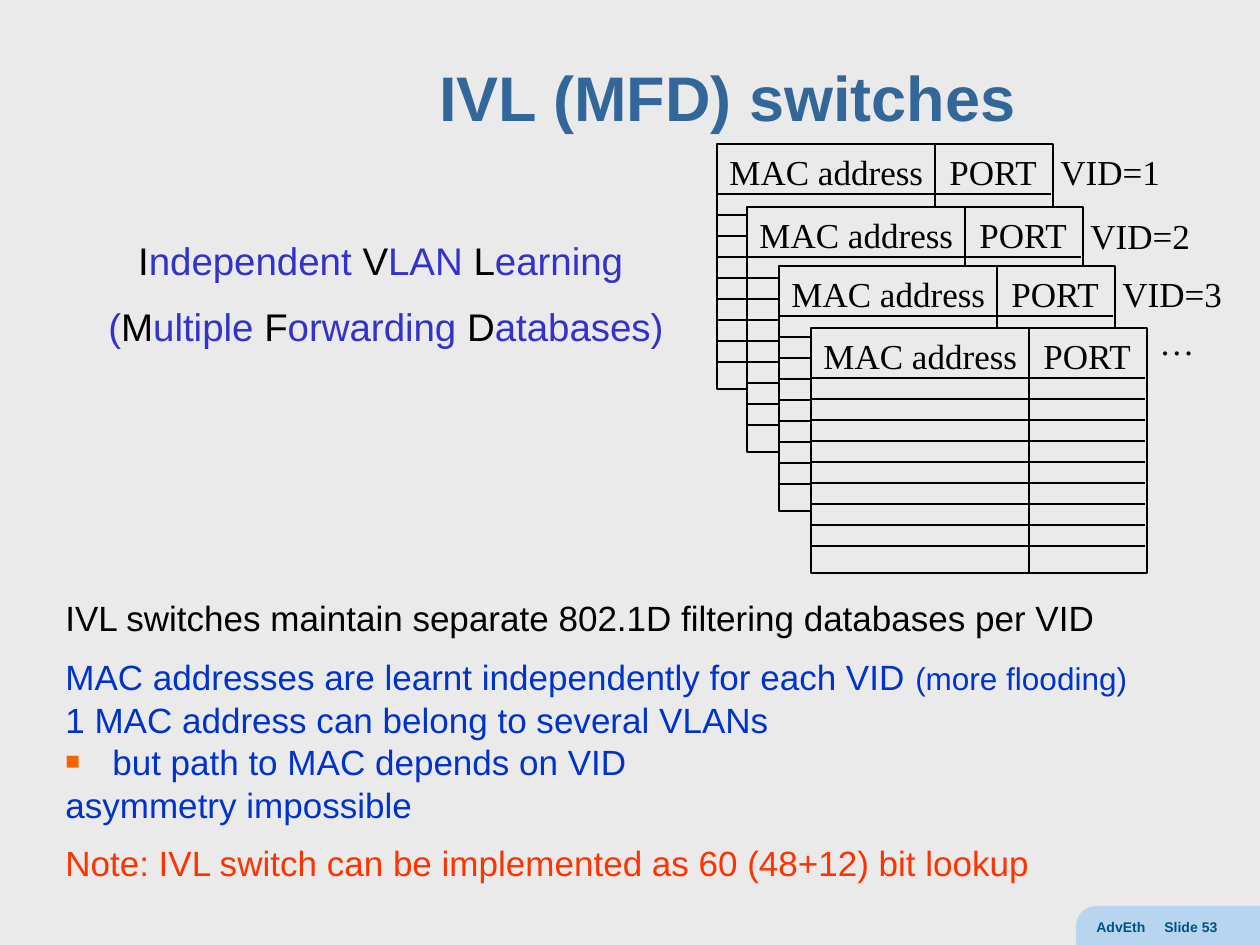
from lxml import etree
from pptx import Presentation, util as u
from pptx.dml.color import RGBColor
from pptx.enum import shapes, text
from pptx.oxml.ns import qn

COLORS = {
    "paper": "EAEAEA", "ink": "000000", "title": "336699", "blue": "0033CC",
    "violet": "3333CC", "red": "FF3300", "bullet": "F46300",
    "tab": "B7D5EF", "footer": "005081",
}
SANS, SERIF = "Arial", "Times New Roman"


def px(n):
    return u.Emu(round(n * 914400 / 126))


def rgb(name):
    return RGBColor.from_string(COLORS[name])


def set_font(font, size, face, color, bold=False):
    font.size, font.name, font.bold = u.Pt(size), face, bold
    font.color.rgb = rgb(color)


def add_text_frame(slide, box):
    frame = slide.shapes.add_textbox(*map(px, box)).text_frame
    frame.word_wrap = True
    return frame


def add_label(slide, box, words, size, face, color, bold=False):
    frame = add_text_frame(slide, box)
    paragraph = frame.paragraphs[0]
    paragraph.text = words
    set_font(paragraph.font, size, face, color, bold)
    return frame


def add_tab_stop(paragraph, position):
    stops = etree.SubElement(paragraph._p.get_or_add_pPr(), qn("a:tabLst"))
    etree.SubElement(stops, qn("a:tab"), pos=str(px(position)), algn="l")


def add_square_bullet(paragraph, indent):
    props = paragraph._p.get_or_add_pPr()
    props.set("marL", str(px(indent)))
    props.set("indent", str(-px(indent)))
    color = etree.SubElement(props, qn("a:buClr"))
    etree.SubElement(color, qn("a:srgbClr"), val=COLORS["bullet"])
    etree.SubElement(props, qn("a:buSzPct"), val="70000")
    etree.SubElement(props, qn("a:buFont"), typeface=SANS)
    etree.SubElement(props, qn("a:buChar"), char="■")


def add_rule(slide, x1, y1, x2, y2):
    rule = slide.shapes.add_connector(
        shapes.MSO_CONNECTOR.STRAIGHT, *map(px, (x1, y1, x2, y2)))
    rule.line.color.rgb = rgb("ink")
    rule.line.width = u.Pt(0.75)
    etree.SubElement(rule._element.spPr, qn("a:effectLst"))


def add_footer(slide, left, top, right, bottom):
    outline = [(right, bottom), (left, bottom), (left, top + 19),
               (left + 1, top + 14), (left + 4, top + 8),
               (left + 8, top + 4), (left + 14, top + 1), (left + 19, top)]
    builder = slide.shapes.build_freeform(px(right), px(top))
    builder.add_line_segments([(px(x), px(y)) for x, y in outline])
    corner = builder.convert_to_shape()
    corner.shadow.inherit = False
    corner.fill.solid()
    corner.fill.fore_color.rgb = rgb("tab")
    corner.line.fill.background()

    frame = add_text_frame(slide, (left + 8, top + 6, 175, 32))
    paragraph = frame.paragraphs[0]
    paragraph.text = "AdvEth\tSlide 53"
    add_tab_stop(paragraph, 68)
    set_font(paragraph.font, 8, SANS, "footer", True)


def add_title(slide, box):
    frame = add_label(slide, box, "IVL (MFD) switches", 36, SANS, "title", True)
    frame.vertical_anchor = text.MSO_ANCHOR.MIDDLE
    frame.paragraphs[0].alignment = text.PP_ALIGN.CENTER
    frame.paragraphs[0].line_spacing = 0.9


def add_acronyms(slide, box):
    """Spell out both names, with the initials in black."""
    lines = [
        [("I", "ndependent "), ("V", "LAN "), ("L", "earning ")],
        [("", "("), ("M", "ultiple "), ("F", "orwarding "), ("D", "atabases)")],
    ]
    frame = add_text_frame(slide, box)
    for i, words in enumerate(lines):
        paragraph = frame.add_paragraph() if i else frame.paragraphs[0]
        paragraph.alignment = text.PP_ALIGN.CENTER
        paragraph.line_spacing = 1.2
        paragraph.space_before = u.Pt(6 if i else 0)
        for initial, rest in words:
            for part, color in ((initial, "ink"), (rest, "violet")):
                if part:
                    run = paragraph.add_run()
                    run.text = part
                    set_font(run.font, 22, SANS, color)


def add_database(slide, left, top):
    """Draw one filtering database: a header above nine empty rows."""
    width, height, header, row, column = 336, 245, 50, 21, 218
    sheet = slide.shapes.add_shape(
        shapes.MSO_SHAPE.RECTANGLE, *map(px, (left, top, width, height)))
    sheet.shadow.inherit = False
    sheet.fill.solid()
    sheet.fill.fore_color.rgb = rgb("paper")
    sheet.line.color.rgb = rgb("ink")
    sheet.line.width = u.Pt(0.75)
    frame = sheet.text_frame
    frame.vertical_anchor = text.MSO_ANCHOR.TOP
    heading = frame.paragraphs[0]
    heading.text = "MAC address\tPORT"
    heading.alignment = text.PP_ALIGN.LEFT
    add_tab_stop(heading, 220)
    set_font(heading.font, 20, SERIF, "ink")

    add_rule(slide, left + column, top + 1, left + column, top + height)
    for i in range(9):
        y = top + header + i * row
        add_rule(slide, left, y, left + width - 2, y)


def add_database_stack(slide, left, top):
    offsets = [(0, 0), (30, 63), (62, 122), (94, 184)]
    for dx, dy in offsets:
        add_database(slide, left + dx, top + dy)
    labels = [("VID=1", 331, 0), ("VID=2", 361, 64),
              ("VID=3", 393, 122), ("…", 430, 170)]
    for words, dx, dy in labels:
        add_label(slide, (left + dx, top + dy, 126, 54), words, 20, SERIF, "ink")


def add_explanation(slide, box):
    points = [
        ("IVL switches maintain separate 802.1D filtering databases per VID", "ink", 1.2),
        ("MAC addresses are learnt independently for each VID ", "blue", 1.2),
        ("1 MAC address can belong to several VLANs", "blue", 0.8),
        ("but path to MAC depends on VID", "blue", 0.8),
        ("asymmetry impossible", "blue", 0.8),
        ("Note: IVL switch can be implemented as 60 (48+12) bit lookup", "red", 1.2),
    ]
    frame = add_text_frame(slide, box)
    for i, (words, color, spacing) in enumerate(points):
        paragraph = frame.add_paragraph() if i else frame.paragraphs[0]
        paragraph.text = words
        paragraph.line_spacing = spacing
        paragraph.space_before = u.Pt(5 if i else 0)
        if words.startswith("but"):
            add_square_bullet(paragraph, 47)
        set_font(paragraph.font, 20, SANS, color)
    aside = frame.paragraphs[1].add_run()
    aside.text = "(more flooding)"
    aside.font.size = u.Pt(18)


def main():
    deck = Presentation()
    deck.slide_width, deck.slide_height = px(1260), px(945)
    slide = deck.slides.add_slide(deck.slide_layouts[6])
    slide.background.fill.solid()
    slide.background.fill.fore_color.rgb = rgb("paper")
    add_footer(slide, 1076, 906, 1260, 945)
    add_title(slide, (267, 23, 921, 157))
    add_explanation(slide, (53, 582, 1174, 325))
    add_database_stack(slide, 717, 144)
    add_acronyms(slide, (67, 222, 638, 203))
    deck.save("out.pptx")


if __name__ == "__main__":
    main()
